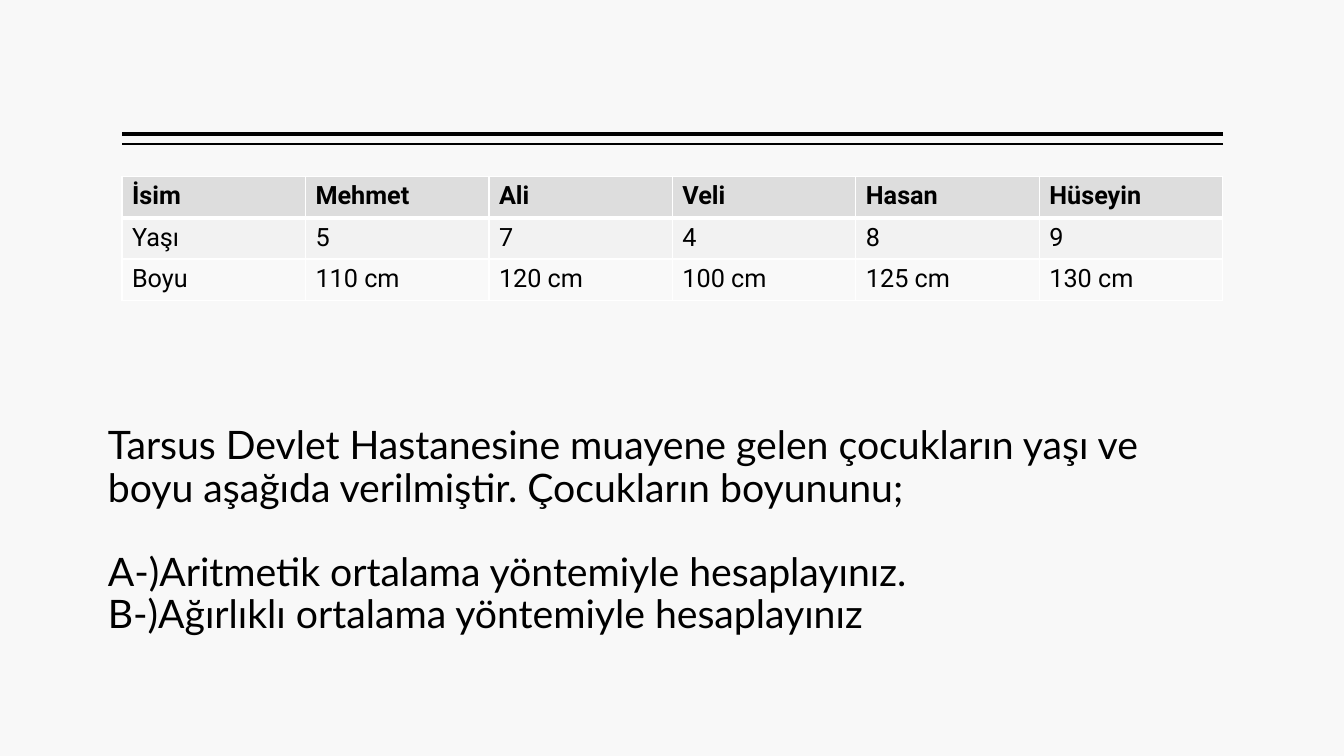
from lxml import etree
from pptx import Presentation
from pptx import util as u
from pptx.dml.color import RGBColor
from pptx.enum import shapes, text
from pptx.oxml.ns import qn

COLORS = {
    "page": "F8F8F8",
    "ink": "000000",
    "grid": "FFFFFF",
    "rows": ["DDDDDD", "F2F2F2", "F9F9F9"],
}
LEFT, WIDTH = 1.21, 10.92
ROW_HEIGHT = 0.41

CHILDREN = [
    ["İsim", "Mehmet", "Ali", "Veli", "Hasan", "Hüseyin"],
    ["Yaşı", "5", "7", "4", "8", "9"],
    ["Boyu", "110 cm", "120 cm", "100 cm", "125 cm", "130 cm"],
]
# Each paragraph with its space before, in points
QUESTION = [
    ("Tarsus Devlet Hastanesine muayene gelen çocukların yaşı ve boyu "
     "aşağıda verilmiştir. Çocukların boyununu;", 0),
    ("A-)Aritmetik ortalama yöntemiyle hesaplayınız.", 30),
    ("B-)Ağırlıklı ortalama yöntemiyle hesaplayınız", 0),
]


def color(name):
    return RGBColor.from_string(name)


def add_span(para, words, font, size, bold=False):
    span = para.add_run()
    span.text = words
    span.font.name = font
    span.font.size = u.Pt(size)
    span.font.bold = bold
    span.font.color.rgb = color(COLORS["ink"])


def add_rule(page, top, weight):
    rule = page.shapes.add_connector(
        shapes.MSO_CONNECTOR.STRAIGHT, u.Inches(LEFT + WIDTH), u.Inches(top),
        u.Inches(LEFT), u.Inches(top))
    rule.line.color.rgb = color(COLORS["ink"])
    rule.line.width = u.Pt(weight)
    etree.SubElement(rule._element.spPr, qn("a:effectLst"))


def set_borders(cell, top, bottom):
    """Draw the four cell edges; they must come before the fill."""
    properties = cell._tc.get_or_add_tcPr()
    edges = [("lnL", 1), ("lnR", 1), ("lnT", top), ("lnB", bottom)]
    for tag, weight in edges:
        edge = etree.SubElement(properties, qn(f"a:{tag}"), w=str(u.Pt(weight)))
        fill = etree.SubElement(edge, qn("a:solidFill"))
        etree.SubElement(fill, qn("a:srgbClr"), val=COLORS["grid"])


def add_children_table(page, top):
    rows, columns = len(CHILDREN), len(CHILDREN[0])
    table = page.shapes.add_table(
        rows, columns, u.Inches(LEFT), u.Inches(top),
        u.Inches(WIDTH), u.Inches(rows * ROW_HEIGHT)).table
    for row, values in enumerate(CHILDREN):
        for column, value in enumerate(values):
            cell = table.cell(row, column)
            set_borders(cell, top=3 if row == 1 else 1,
                        bottom=3 if row == 0 else 1)
            cell.fill.solid()
            cell.fill.fore_color.rgb = color(COLORS["rows"][row])
            add_span(cell.text_frame.paragraphs[0], value, "Roboto", 18,
                     bold=row == 0)


def add_question(page, left, top, height):
    box = page.shapes.add_textbox(u.Inches(left), u.Inches(top),
                                  u.Inches(WIDTH), u.Inches(height))
    frame = box.text_frame
    frame.word_wrap = True
    frame.vertical_anchor = text.MSO_ANCHOR.BOTTOM
    frame.margin_left = frame.margin_right = 0
    for index, (words, space) in enumerate(QUESTION):
        para = frame.add_paragraph() if index else frame.paragraphs[0]
        para.line_spacing = 0.9
        para.space_before = u.Pt(space)
        add_span(para, words, "Lato", 28)


def main():
    deck = Presentation()
    deck.slide_width, deck.slide_height = u.Inches(13.33), u.Inches(7.5)
    page = deck.slides.add_slide(deck.slide_layouts[6])
    page.background.fill.solid()
    page.background.fill.fore_color.rgb = color(COLORS["page"])

    # Double rule
    add_rule(page, 1.33, 3)
    add_rule(page, 1.43, 1)

    # Question and data
    add_question(page, 1.07, 3.98, 2.39)
    add_children_table(page, 1.75)

    deck.save("out.pptx")


if __name__ == "__main__":
    main()
